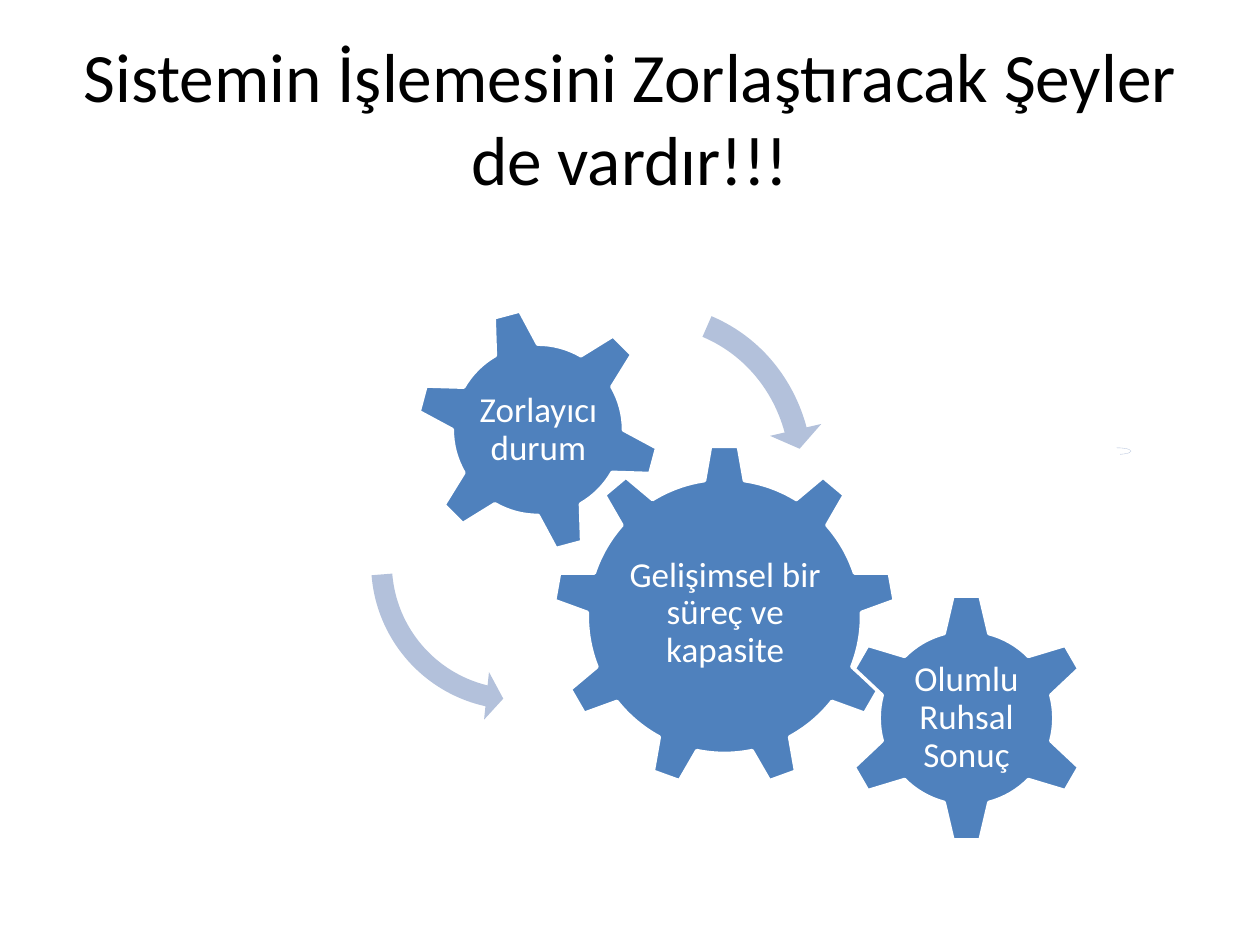
from dataclasses import dataclass

from pptx import Presentation
from pptx.dml.color import RGBColor
from pptx.enum.shapes import MSO_SHAPE
from pptx.enum.text import MSO_ANCHOR, PP_ALIGN
from pptx.util import Cm, Pt

GEAR_6 = MSO_SHAPE.GEAR_6
GEAR_9 = MSO_SHAPE.GEAR_9
CLOCKWISE = MSO_SHAPE.CIRCULAR_ARROW
COUNTERCLOCKWISE = MSO_SHAPE.LEFT_CIRCULAR_ARROW
MIDDLE = MSO_ANCHOR.MIDDLE
CENTER = PP_ALIGN.CENTER


@dataclass(frozen=True)
class Theme:
    font: str = "Calibri"
    title_size: float = 39.6
    label_size: float = 20
    outline_width: float = 2
    title: RGBColor = RGBColor(0, 0, 0)
    label: RGBColor = RGBColor(255, 255, 255)
    outline: RGBColor = RGBColor(255, 255, 255)
    gear: RGBColor = RGBColor(0x4F, 0x81, 0xBD)
    arrow: RGBColor = RGBColor(0xB3, 0xC1, 0xDB)


THEME = Theme()


@dataclass(frozen=True)
class Box:
    """Left, top, width and height in centimetres."""
    left: float
    top: float
    width: float
    height: float

    def lengths(self) -> tuple:
        return Cm(self.left), Cm(self.top), Cm(self.width), Cm(self.height)


@dataclass(frozen=True)
class Gear:
    kind: MSO_SHAPE
    box: Box
    label: str
    label_box: Box
    rotation: float = 0


@dataclass(frozen=True)
class Arrow:
    """Angles in degrees, thickness and head as fractions of the box."""
    kind: MSO_SHAPE
    box: Box
    thickness: float
    head_angle: float
    end_angle: float
    start_angle: float
    head_width: float
    rotation: float = 0


TITLE = "Sistemin İşlemesini Zorlaştıracak Şeyler de vardır!!!"
TITLE_BOX = Box(1.27, 0.76, 22.86, 3.18)

GEARS = [
    Gear(GEAR_9, Box(11.15, 8.97, 6.91, 6.91),
         "Gelişimsel bir süreç ve kapasite", Box(12.55, 10.59, 4.14, 3.56)),
    Gear(GEAR_6, Box(16.97, 11.96, 5.03, 5.03),
         "Olumlu Ruhsal Sonuç", Box(18.24, 13.23, 2.49, 2.49)),
    Gear(GEAR_6, Box(8.38, 6.2, 4.93, 4.93),
         "Zorlayıcı durum", Box(9.47, 7.29, 2.77, 2.77), rotation=345),
]

ARROWS = [
    Arrow(CLOCKWISE, Box(22.23, 9.02, 0.58, 0.15),
          0.05, 4.98, 42.06, 264.09, 0.06),
    Arrow(COUNTERCLOCKWISE, Box(7.21, 8.15, 6.43, 6.43),
          0.065, 7.17, 174.82, 247.3, 0.075, rotation=288.2),
    Arrow(CLOCKWISE, Box(8.79, 6.02, 8.1, 7.57),
          0.06, 6.57, 221.9, 175.14, 0.07, rotation=118.5),
]


def add_text(slide, box: Box, text: str, size: float, color: RGBColor):
    """Add centred, wrapped text and return its frame."""
    tf = slide.shapes.add_textbox(*box.lengths()).text_frame
    tf.word_wrap = True
    tf.vertical_anchor = MIDDLE
    p = tf.paragraphs[0]
    p.text = text
    p.alignment = CENTER
    p.font.name = THEME.font
    p.font.size = Pt(size)
    p.font.color.rgb = color
    return tf


def add_filled(slide, kind: MSO_SHAPE, box: Box, color: RGBColor, rotation: float):
    sp = slide.shapes.add_shape(kind, *box.lengths())
    sp.shadow.inherit = False
    sp.fill.solid()
    sp.fill.fore_color.rgb = color
    sp.rotation = rotation
    return sp


def add_gear(slide, gear: Gear) -> None:
    sp = add_filled(slide, gear.kind, gear.box, THEME.gear, gear.rotation)
    sp.line.color.rgb = THEME.outline
    sp.line.width = Pt(THEME.outline_width)
    tf = add_text(slide, gear.label_box, gear.label, THEME.label_size, THEME.label)
    tf.margin_left = tf.margin_right = tf.margin_top = tf.margin_bottom = Cm(0.08)
    tf.paragraphs[0].line_spacing = 0.9


def add_arrow(slide, arrow: Arrow) -> None:
    sp = add_filled(slide, arrow.kind, arrow.box, THEME.arrow, arrow.rotation)
    sp.line.fill.background()
    # Angles are stored in 60000ths of a degree, adjustments in 100000ths.
    angles = [a * 0.6 for a in (arrow.head_angle, arrow.end_angle, arrow.start_angle)]
    for i, value in enumerate([arrow.thickness, *angles, arrow.head_width]):
        sp.adjustments[i] = value


def main() -> None:
    prs = Presentation()
    prs.slide_width, prs.slide_height = Cm(25.4), Cm(19.05)
    slide = prs.slides.add_slide(prs.slide_layouts[6])
    add_text(slide, TITLE_BOX, TITLE, THEME.title_size, THEME.title)
    for gear in GEARS:
        add_gear(slide, gear)
    for arrow in ARROWS:
        add_arrow(slide, arrow)
    prs.save("out.pptx")


if __name__ == "__main__":
    main()
